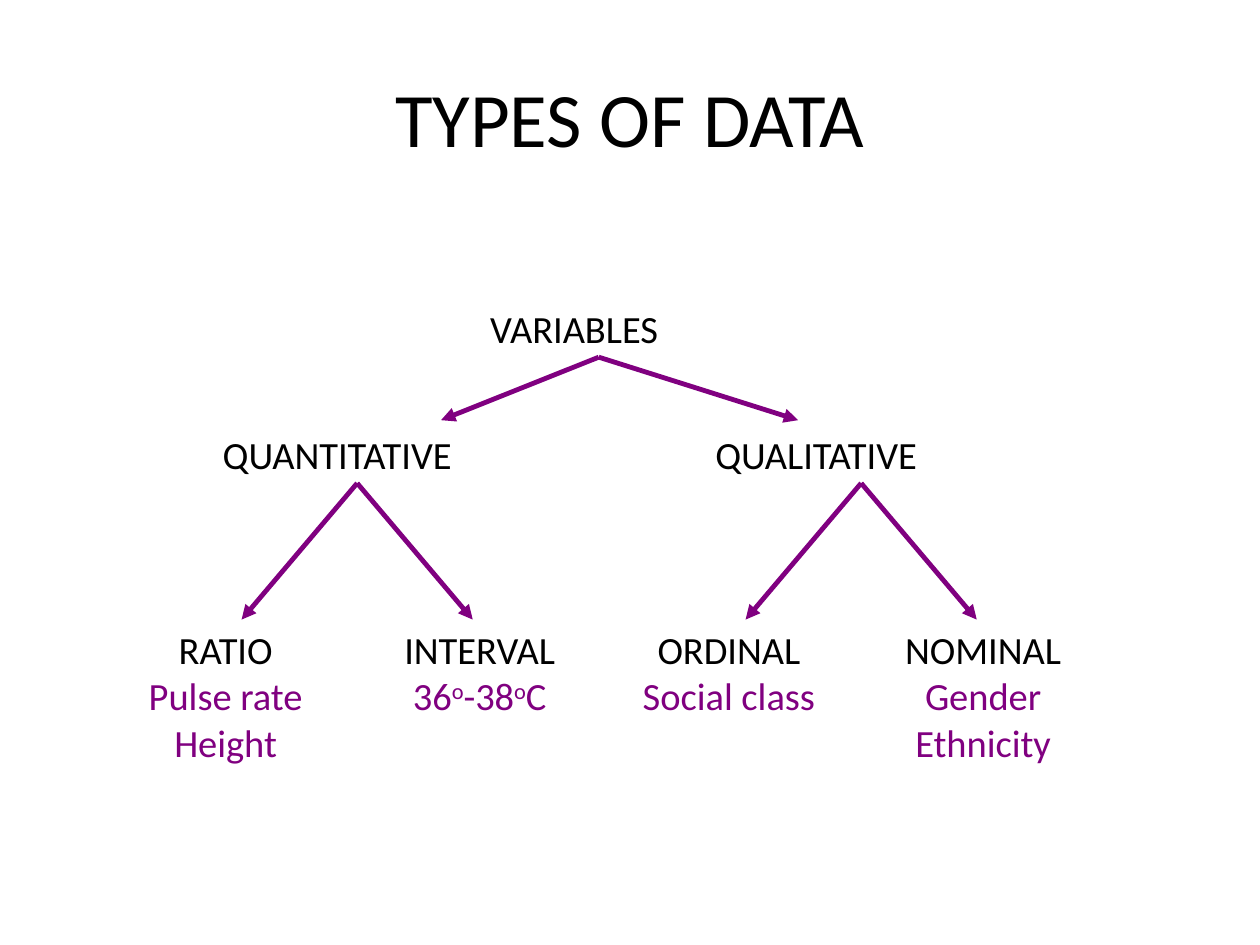
"""Build a slide with a tree of the types of data."""
import pptx
import pptx.dml.color
import pptx.enum.shapes
import pptx.enum.text
import pptx.oxml.ns
import pptx.util
from lxml import etree

Cm = pptx.util.Cm
Pt = pptx.util.Pt
ALIGN = pptx.enum.text.PP_ALIGN
COLORS = {"text": "000000", "accent": "800080"}


def style(span, size, color):
    span.font.name = "Calibri"
    span.font.size = Pt(size)
    span.font.color.rgb = pptx.dml.color.RGBColor.from_string(COLORS[color])


def add_label(page, left, top, width, height, lines, align):
    box = page.shapes.add_textbox(Cm(left), Cm(top), Cm(width), Cm(height))
    frame = box.text_frame
    frame.word_wrap = True
    for row, line in enumerate(lines):
        para = frame.paragraphs[0] if row == 0 else frame.add_paragraph()
        para.alignment = align
        for index, text in enumerate(line.split("^")):
            span = para.add_run()
            span.text = text
            style(span, 22, "accent" if row else "text")
            if index % 2:
                span.font._element.set("baseline", "30000")


deck = pptx.Presentation()
deck.slide_width, deck.slide_height = Cm(25.4), Cm(19.05)
page = deck.slides.add_slide(deck.slide_layouts[5])

title = page.shapes.title
title.left, title.top, title.width, title.height = Cm(1.27), Cm(0.76), Cm(22.86), Cm(3.18)
title.text_frame.text = "TYPES OF DATA"
title.text_frame.vertical_anchor = pptx.enum.text.MSO_ANCHOR.MIDDLE
title.text_frame.paragraphs[0].alignment = ALIGN.CENTER
style(title.text_frame.paragraphs[0].runs[0], 44, "text")

headings = [
    ("VARIABLES", 9.63, 6.02, 4.98),
    ("QUANTITATIVE", 4.24, 8.56, 6.53),
    ("QUALITATIVE", 14.17, 8.56, 5.89),
]
for text, left, top, width in headings:
    add_label(page, left, top, width, 1.19, [text], ALIGN.LEFT)

scales = [
    (2.34, 4.42, 3.05, ["RATIO", "Pulse rate", "Height"]),
    (7.42, 4.5, 2.11, ["INTERVAL", "36^o^-38^o^C"]),
    (12.22, 4.95, 3.05, ["ORDINAL", "Social class"]),
    (17.65, 4.34, 3.05, ["NOMINAL", "Gender", "Ethnicity"]),
]
for left, width, height, lines in scales:
    add_label(page, left, 12.5, width, height, lines, ALIGN.CENTER)

branches = [
    (12.07, 7.2, 8.47, (8.89, 16.09)),
    (7.2, 9.74, 12.49, (4.87, 9.53)),
    (17.36, 9.74, 12.49, (15.03, 19.69)),
]
for start, top, bottom, ends in branches:
    for end in ends:
        arrow = page.shapes.add_connector(
            pptx.enum.shapes.MSO_CONNECTOR.STRAIGHT, Cm(start), Cm(top), Cm(end), Cm(bottom)
        )
        arrow.line.width = Pt(2.75)
        arrow.line.color.rgb = pptx.dml.color.RGBColor.from_string(COLORS["accent"])
        line = arrow.line._get_or_add_ln()
        etree.SubElement(line, pptx.oxml.ns.qn("a:tailEnd"), type="triangle")
        etree.SubElement(arrow._element.spPr, pptx.oxml.ns.qn("a:effectLst"))

deck.save("out.pptx")
